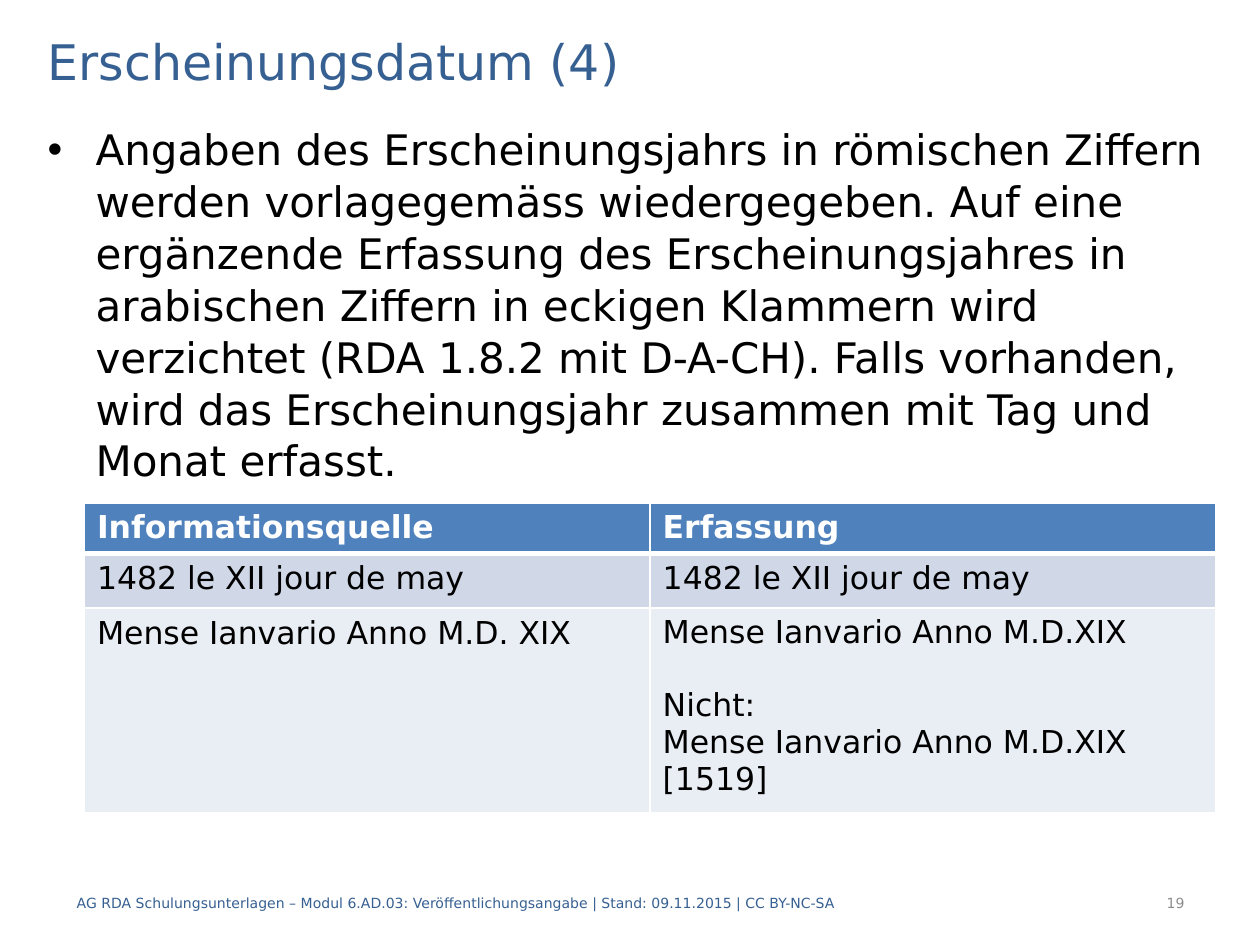
from lxml.etree import SubElement
from pptx import Presentation
from pptx.dml.color import RGBColor
from pptx.enum.text import MSO_ANCHOR, PP_ALIGN
from pptx.oxml.ns import qn
from pptx.util import Inches, Pt

HUES = {"blue": "376092", "black": "000000", "gray": "8C8C8C", "white": "FFFFFF",
        "head": "4F81BD", "dark": "D0D8E8", "light": "E9EDF4"}


def write(para, text, size, hue, bold=False):
    run = para.add_run()
    run.text = text
    form = {"name": "DejaVu Sans", "size": Pt(size), "bold": bold}
    for key, value in form.items():
        setattr(run.font, key, value)
    run.font.color.rgb = RGBColor.from_string(HUES[hue])


def edge(cell, side, width):
    line = SubElement(cell._tc.get_or_add_tcPr(), qn(f"a:ln{side}"), w=str(Pt(width)))
    fill = SubElement(line, qn("a:solidFill"))
    SubElement(fill, qn("a:srgbClr"), val=HUES["white"])


deck = Presentation()
deck.slide_width, deck.slide_height = Inches(10), Inches(7.5)
slide = deck.slides.add_slide(deck.slide_layouts[6])

body = ("Angaben des Erscheinungsjahrs in römischen Ziffern werden vorlagegemäss "
        "wiedergegeben. Auf eine ergänzende Erfassung des Erscheinungsjahres in "
        "arabischen Ziffern in eckigen Klammern wird verzichtet (RDA 1.8.2 mit "
        "D-A-CH). Falls vorhanden, wird das Erscheinungsjahr zusammen mit Tag und "
        "Monat erfasst.")
foot = ("AG RDA Schulungsunterlagen – Modul 6.AD.03: Veröffentlichungsangabe | "
        "Stand: 09.11.2015 | CC BY-NC-SA")
mid, top = MSO_ANCHOR.MIDDLE, MSO_ANCHOR.TOP
left, right = PP_ALIGN.LEFT, PP_ALIGN.RIGHT
boxes = [
    ((0.28, 0.2, 9.45, 0.56), "Erscheinungsdatum (4)", 28, "blue", mid, left),
    ((0.28, 0.92, 9.45, 5.98), body, 24, "black", top, left),
    ((0.51, 6.97, 6.69, 0.4), foot, 8, "blue", mid, left),
    ((7.91, 6.97, 1.59, 0.4), "19", 8, "gray", mid, right),
]
for place, text, size, hue, anchor, align in boxes:
    frame = slide.shapes.add_textbox(*map(Inches, place)).text_frame
    for key, value in {"word_wrap": True, "vertical_anchor": anchor}.items():
        setattr(frame, key, value)
    para = frame.paragraphs[0]
    para.alignment = align
    write(para, text, size, hue)
    if text == body:
        para.line_spacing = 1.03
        props = para._p.get_or_add_pPr()
        props.set("marL", str(Inches(0.38)))
        props.set("indent", str(Inches(-0.38)))
        SubElement(props, qn("a:buFont"), typeface="Arial")
        SubElement(props, qn("a:buChar"), char="•")

rows = [
    (0.39, "head", "white", [["Informationsquelle"], ["Erfassung"]]),
    (0.42, "dark", "black", [["1482 le XII jour de may"]] * 2),
    (1.58, "light", "black", [
        ["Mense Ianvario Anno M.D. XIX"],
        ["Mense Ianvario Anno M.D.XIX", "Nicht:", "Mense Ianvario Anno M.D.XIX [1519]"]]),
]
place = map(Inches, (0.67, 3.99, 8.98, 2.39))
table = slide.shapes.add_table(len(rows), 2, *place).table
for r, (height, fill, hue, texts) in enumerate(rows):
    table.rows[r].height = Inches(height)
    for c, lines in enumerate(texts):
        cell = table.cell(r, c)
        cell.margin_bottom = Inches(0.08 if r else 0.05)
        for side in "LRTB":
            thick = (r, side) in [(0, "B"), (1, "T")]
            edge(cell, side, 3 if thick else 1)
        cell.fill.solid()
        cell.fill.fore_color.rgb = RGBColor.from_string(HUES[fill])
        frame = cell.text_frame
        for i, text in enumerate(lines):
            para = frame.add_paragraph() if i else frame.paragraphs[0]
            if text == "Nicht:":
                para.space_before = Pt(21)
            if r and len(lines) == 1:
                para.line_spacing = 1.02
            write(para, text, 18, hue, r == 0)

deck.save("out.pptx")
